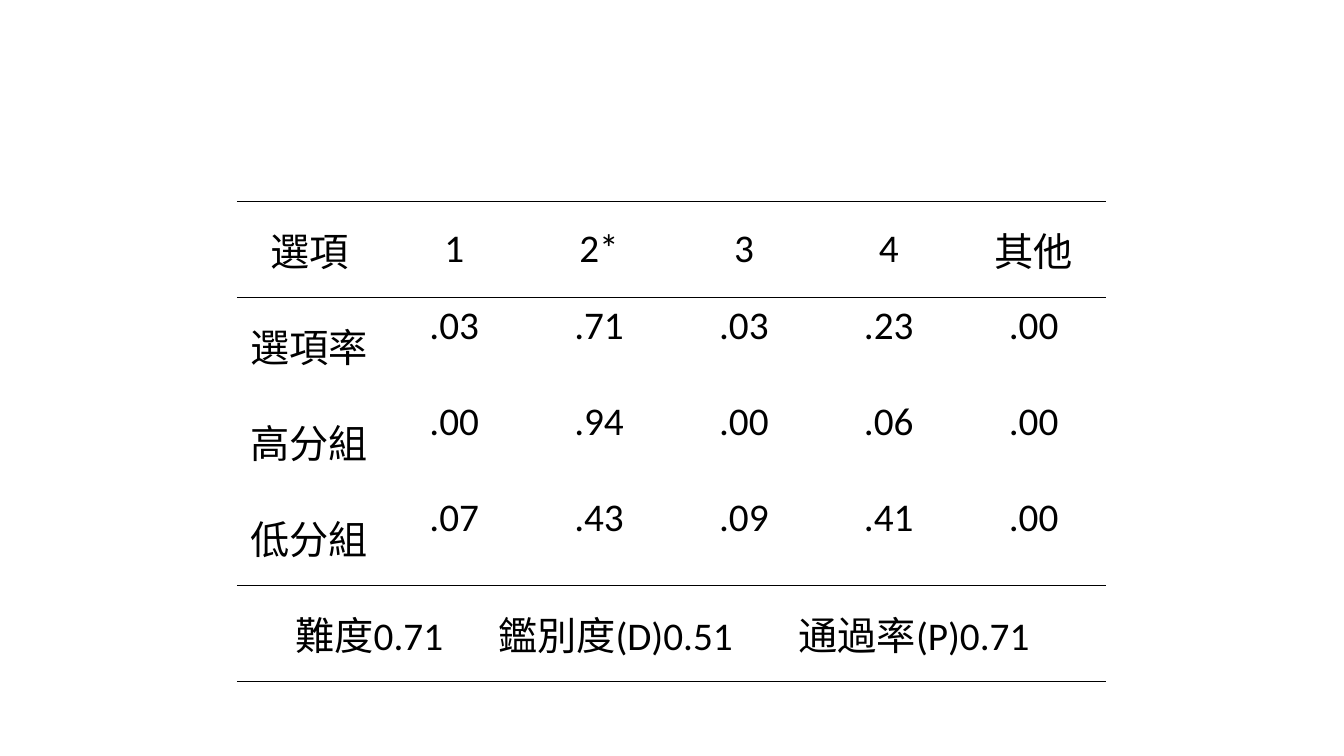
from lxml import etree
from pptx import Presentation
from pptx.dml.color import RGBColor
from pptx.enum.text import MSO_ANCHOR, PP_ALIGN
from pptx.oxml.ns import qn
from pptx.util import Inches, Pt

BLACK = RGBColor(0, 0, 0)
CHINESE_FONT, NUMBER_FONT = "Lato", "Calibri"

ITEM_ROWS = [
    ["選項", "1", "2*", "3", "4", "其他"],
    ["選項率", ".03", ".71", ".03", ".23", ".00"],
    ["高分組", ".00", ".94", ".00", ".06", ".00"],
    ["低分組", ".07", ".43", ".09", ".41", ".00"],
]
SUMMARY = [("難度", "0.71"), ("鑑別度", "(D)0.51"), ("通過率", "(P)0.71")]
SUMMARY_START = Inches(0.58)
SUMMARY_TABS = [Inches(2.01), Inches(4.99)]
# Sides with a rule, for each table row
RULES = ["TB", "T", "", "B", "TB"]


class TableSlide:
    def __init__(self, presentation):
        self.slide = presentation.slides.add_slide(presentation.slide_layouts[6])
        self.font_format = {"size": Pt(28), "bold": False}

    def add_table(self, rows, columns, left, top, width, height):
        table = self.slide.shapes.add_table(rows, columns, left, top, width, height).table
        table.first_row = table.horz_banding = False
        return table

    def rule_cell(self, cell, ruled_sides):
        """Clear the cell's fill and draw lines only on the ruled sides."""
        cell.fill.background()
        properties = cell._tc.get_or_add_tcPr()
        for position, side in enumerate("LRTB"):
            line = etree.Element(qn(f"a:ln{side}"), w=str(Pt(1)))
            if side in ruled_sides:
                fill = etree.SubElement(line, qn("a:solidFill"))
                etree.SubElement(fill, qn("a:srgbClr"), val=str(BLACK))
            else:
                etree.SubElement(line, qn("a:noFill"))
            properties.insert(position, line)

    def add_run(self, paragraph, text):
        run = paragraph.add_run()
        run.text = text
        is_chinese = any("\u4e00" <= letter <= "\u9fff" for letter in text)
        run.font.name = CHINESE_FONT if is_chinese else NUMBER_FONT
        run.font.color.rgb = BLACK
        for name, value in self.font_format.items():
            setattr(run.font, name, value)

    def fill_cell(self, cell, text, anchor):
        cell.vertical_anchor = anchor
        paragraph = cell.text_frame.paragraphs[0]
        paragraph.alignment = PP_ALIGN.CENTER
        properties = paragraph._p.get_or_add_pPr()
        properties.set("marL", str(Inches(0.25)))
        properties.set("indent", str(Inches(-0.25)))
        self.add_run(paragraph, text)

    def fill_summary(self, cell, pairs, start, tabs):
        """Write label and value pairs on one line, spaced by tab stops."""
        cell.vertical_anchor = MSO_ANCHOR.MIDDLE
        cell.margin_left = start
        paragraph = cell.text_frame.paragraphs[0]
        paragraph.alignment = PP_ALIGN.LEFT
        tab_list = etree.SubElement(paragraph._p.get_or_add_pPr(), qn("a:tabLst"))
        for tab in tabs:
            etree.SubElement(tab_list, qn("a:tab"), pos=str(tab), algn="l")
        for number, (label, value) in enumerate(pairs, 1):
            self.add_run(paragraph, label)
            self.add_run(paragraph, value + ("\t" if number < len(pairs) else ""))


def main():
    presentation = Presentation()
    presentation.slide_width, presentation.slide_height = Inches(13.33), Inches(7.5)
    page = TableSlide(presentation)
    table = page.add_table(len(RULES), len(ITEM_ROWS[0]),
                           Inches(2.35), Inches(2), Inches(8.62), Inches(4.76))
    for row, sides in zip(table.rows, RULES):
        for cell in row.cells:
            page.rule_cell(cell, sides)
    for row_number, texts in enumerate(ITEM_ROWS):
        for column, text in enumerate(texts):
            is_heading = row_number == 0 or column == 0
            anchor = MSO_ANCHOR.MIDDLE if is_heading else MSO_ANCHOR.TOP
            page.fill_cell(table.cell(row_number, column), text, anchor)

    summary_row = len(ITEM_ROWS)
    summary_cell = table.cell(summary_row, 0)
    summary_cell.merge(table.cell(summary_row, len(ITEM_ROWS[0]) - 1))
    page.fill_summary(summary_cell, SUMMARY, SUMMARY_START, SUMMARY_TABS)
    presentation.save("out.pptx")


if __name__ == "__main__":
    main()
